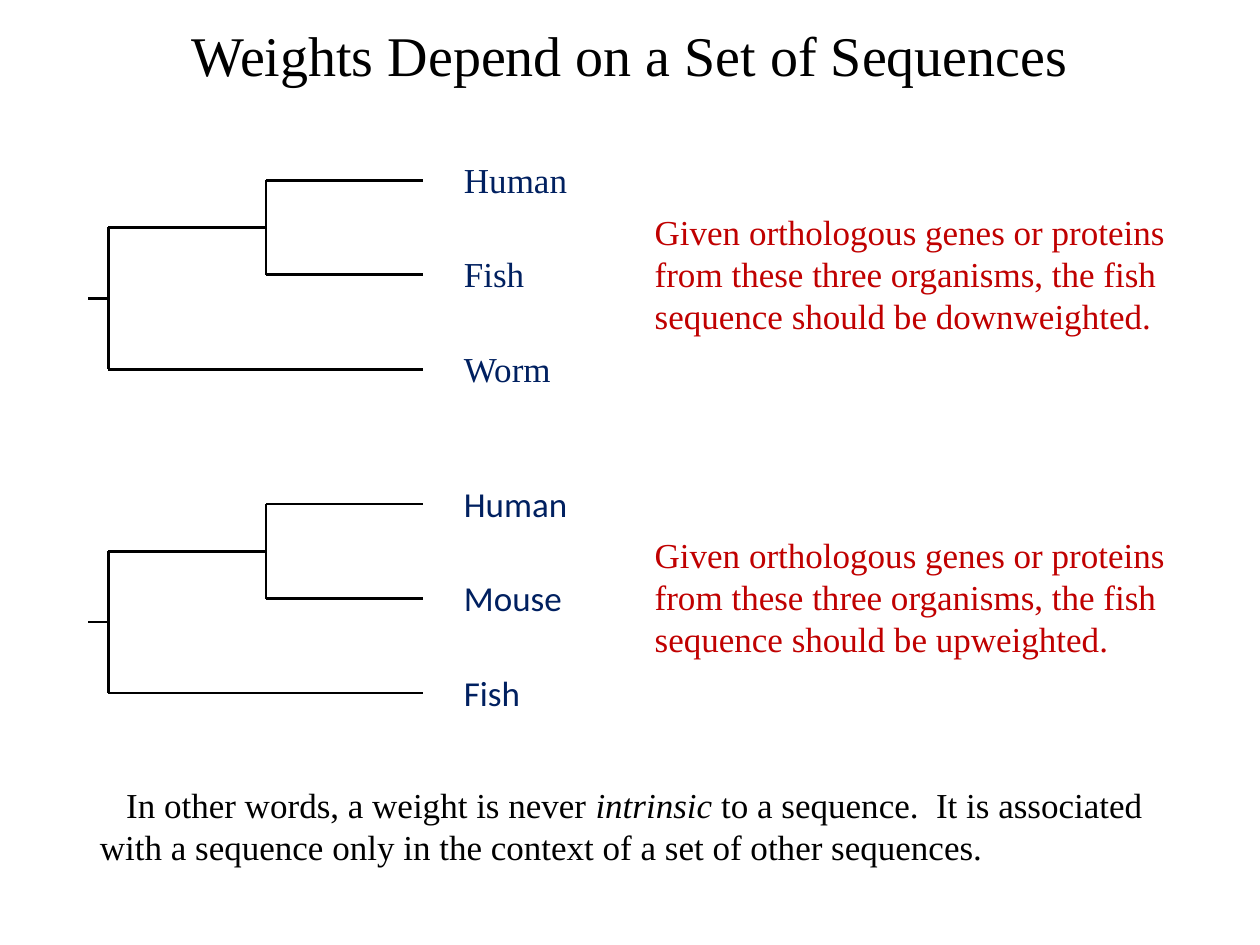
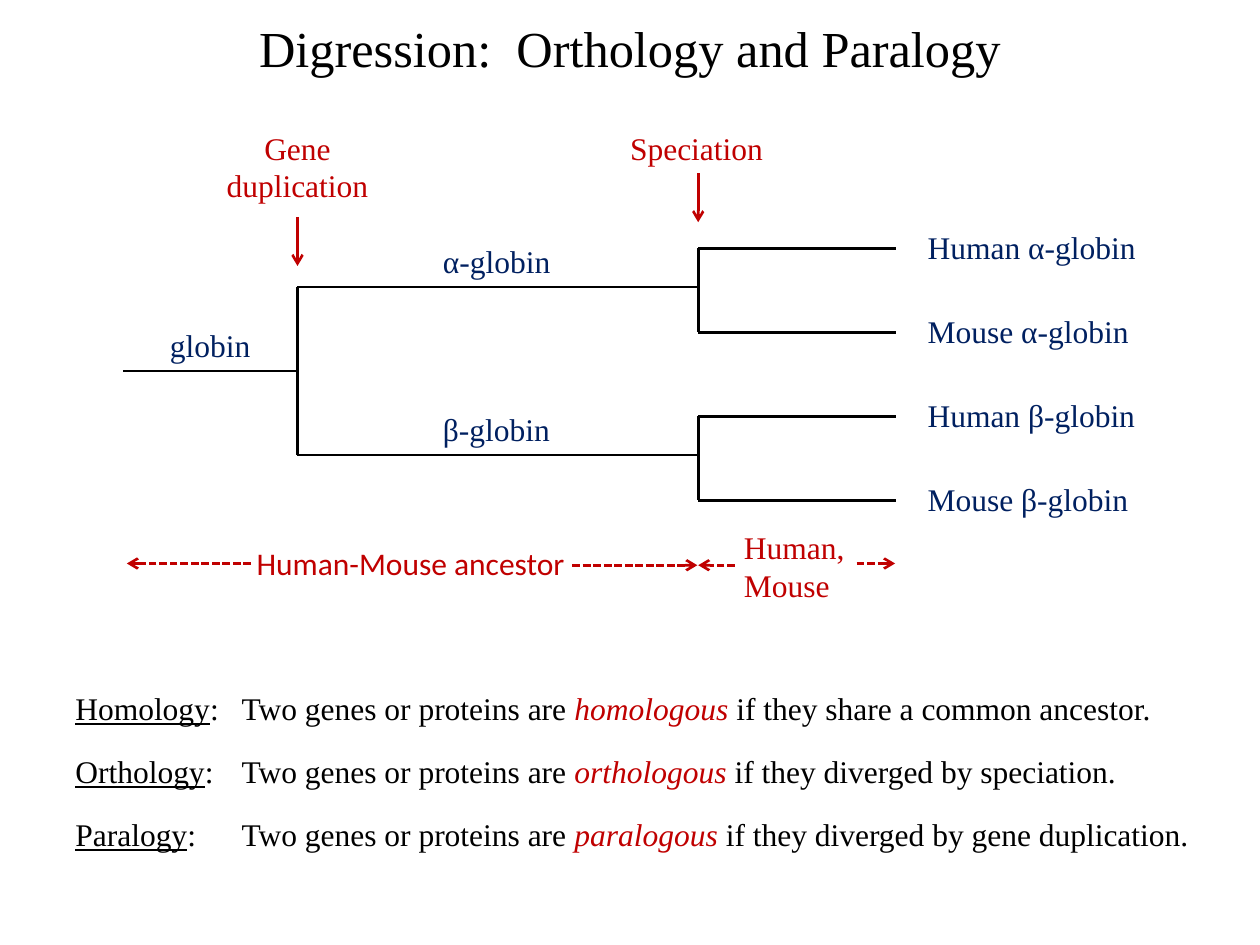
"""Two slides on sequence weights, orthology and paralogy, drawn with gene trees."""
from lxml.etree import SubElement
from pptx import Presentation
from pptx.dml.color import RGBColor as RGB
from pptx.enum.dml import MSO_LINE as Dash
from pptx.enum.shapes import MSO_CONNECTOR as Conn
from pptx.enum.text import MSO_ANCHOR as Anchor, MSO_AUTO_SIZE as Fit, PP_ALIGN as Align
from pptx.oxml.ns import qn
from pptx.util import Pt

COLORS = {"ink": "000000", "label": "002060", "accent": "C00000"}
SERIF, SANS = "Times New Roman", "Calibri"


def style(font, size, color, name=SERIF):
    font.name, font.size = name, Pt(size)
    font.color.rgb = RGB.from_string(COLORS[color])


def add_slide(prs, title, size, height):
    s = prs.slides.add_slide(prs.slide_layouts[5])
    sp = s.shapes.title
    sp.left, sp.top, sp.width, sp.height = Pt(36), Pt(6), Pt(648), Pt(height)
    tf = sp.text_frame
    tf.text, tf.auto_size, tf.vertical_anchor = title, Fit.NONE, Anchor.MIDDLE
    p = tf.paragraphs[0]
    p.alignment = Align.CENTER
    style(p.font, size, "ink")
    return s


def add_text(s, x, y, w, h, runs, size, color, name=SERIF, wrap=False, align=Align.LEFT):
    sp = s.shapes.add_textbox(Pt(x), Pt(y), Pt(w), Pt(h))
    tf = sp.text_frame
    tf.word_wrap, tf.auto_size = wrap, Fit.SHAPE_TO_FIT_TEXT
    p = tf.paragraphs[0]
    p.alignment = align
    style(p.font, size, color, name)
    for text, look in [(runs, "")] if isinstance(runs, str) else runs:
        r = p.add_run()
        r.text = text
        if "i" in look:
            r.font.italic = True
        if "u" in look:
            r.font.underline = True
        if "accent" in look:
            r.font.color.rgb = RGB.from_string(COLORS["accent"])
    return sp


def add_line(s, x1, y1, x2, y2, color="ink", arrow=False, dashed=False):
    c = s.shapes.add_connector(Conn.STRAIGHT, Pt(x1), Pt(y1), Pt(x2), Pt(y2))
    c.line.width = Pt(1.5)
    c.line.color.rgb = RGB.from_string(COLORS[color])
    if dashed:
        c.line.dash_style = Dash.SQUARE_DOT
    if arrow:
        SubElement(c.line._get_or_add_ln(), qn("a:tailEnd"), type="arrow")
    SubElement(c._element.spPr, qn("a:effectLst"))
    return c


def add_fork(s, x, ends):
    add_line(s, x, ends[0][1], x, ends[-1][1])
    for end_x, y in ends:
        add_line(s, x, y, end_x, y)


def add_species_tree(s, top, species, name):
    root_x, split_x, tip_x = 62, 152, 242
    tips = [top + 54 * i for i in range(3)]
    split_y = (tips[0] + tips[1]) / 2
    root_y = (split_y + tips[2]) / 2
    add_fork(s, root_x, [(split_x, split_y), (tip_x, tips[2])])
    add_fork(s, split_x, [(tip_x, y) for y in tips[:2]])
    add_line(s, 50.5, root_y, root_x, root_y)
    for y, (label, w) in zip(tips, species):
        add_text(s, 258, y - 16, w, 31.5, label, 20, "label", name)


def build_weights(prs):
    s = add_slide(prs, "Weights Depend on a Set of Sequences", 32, 50)
    trees = [
        (103, [("Human", 74), ("Fish", 49), ("Worm", 65.5)], SERIF, "downweighted"),
        (288, [("Human", 74), ("Mouse", 71), ("Fish", 47)], SANS, "upweighted"),
    ]
    for top, species, name, verdict in trees:
        add_species_tree(s, top, species, name)
        note = ("Given orthologous genes or proteins from these three organisms, "
                f"the fish sequence should be {verdict}.")
        add_text(s, 367, top + 13.5, 312, 80, note, 20, "accent", wrap=True)
    runs = [
        ("In other words, a weight is never ", ""),
        ("intrinsic", "i"),
        (" to a sequence.  It is associated with a sequence only in the context "
         "of a set of other sequences.", ""),
    ]
    sp = add_text(s, 50, 444, 634, 55.5, runs, 20, "ink", wrap=True)
    pPr = sp.text_frame.paragraphs[0]._p.get_or_add_pPr()
    pPr.set("marL", "0")
    pPr.set("indent", str(Pt(15)))


def add_globin_tree(s):
    dup_x, split_x, tip_x = 170, 399, 512
    genes = [("α-globin", 164), ("β-globin", 260)]
    tips = [142 + 48 * i for i in range(4)]
    widths = [134, 131, 133, 130]
    add_line(s, 70.5, 212, dup_x, 212)
    add_text(s, 90, 183, 61, 29, "globin", 18, "label")
    add_fork(s, dup_x, [(split_x, y) for _, y in genes])
    for i, (gene, y) in enumerate(genes):
        add_text(s, 246, y - 29, 76, 29, gene, 18, "label")
        pair = slice(2 * i, 2 * i + 2)
        add_fork(s, split_x, [(tip_x, tip) for tip in tips[pair]])
        for species, tip, w in zip(("Human", "Mouse"), tips[pair], widths[pair]):
            add_text(s, 523, tip - 15, w, 29, f"{species} {gene}", 18, "label")


def add_events(s):
    add_text(s, 120, 70, 100, 51, "Gene duplication", 18, "accent",
             wrap=True, align=Align.CENTER)
    add_line(s, 170, 124, 170, 152, "accent", arrow=True)
    speciation = add_text(s, 353, 70, 92, 29, "Speciation", 18, "accent")
    arrow = add_line(s, 399, 99, 399, 127, "accent", arrow=True)
    arrow.begin_connect(speciation, 2)


def add_timeline(s):
    add_text(s, 139.5, 307.5, 193, 29, "Human-Mouse ancestor", 18, "accent", SANS)
    add_text(s, 418, 298, 74, 51, "Human, Mouse", 18, "accent", wrap=True)
    for start, end, y in [(143.5, 72.5, 322), (327, 398.5, 323),
                          (420, 399, 323), (489.5, 511.5, 322)]:
        add_line(s, start, y, end, y, "accent", arrow=True, dashed=True)


def add_definitions(s):
    rows = [
        ("Homology", 97, "homologous", " if they share a common ancestor.", 561),
        ("Orthology", 99, "orthologous", " if they diverged by speciation.", 536),
        ("Paralogy", 84, "paralogous", " if they diverged by gene duplication.", 575),
    ]
    for i, (term, term_w, adjective, ending, w) in enumerate(rows):
        y = 390 + 36 * i
        add_text(s, 36, y, term_w, 29, [(term, "u"), (":", "")], 18, "ink")
        runs = [("Two genes or proteins are ", ""), (adjective, "i accent"), (ending, "")]
        add_text(s, 131, y, w, 29, runs, 18, "ink")


def build_orthology(prs):
    s = add_slide(prs, "Digression:  Orthology and Paralogy", 28.8, 42)
    add_globin_tree(s)
    add_events(s)
    add_timeline(s)
    add_definitions(s)


def main():
    prs = Presentation()
    prs.slide_width, prs.slide_height = Pt(720), Pt(540)
    build_weights(prs)
    build_orthology(prs)
    prs.save("out.pptx")


if __name__ == "__main__":
    main()
